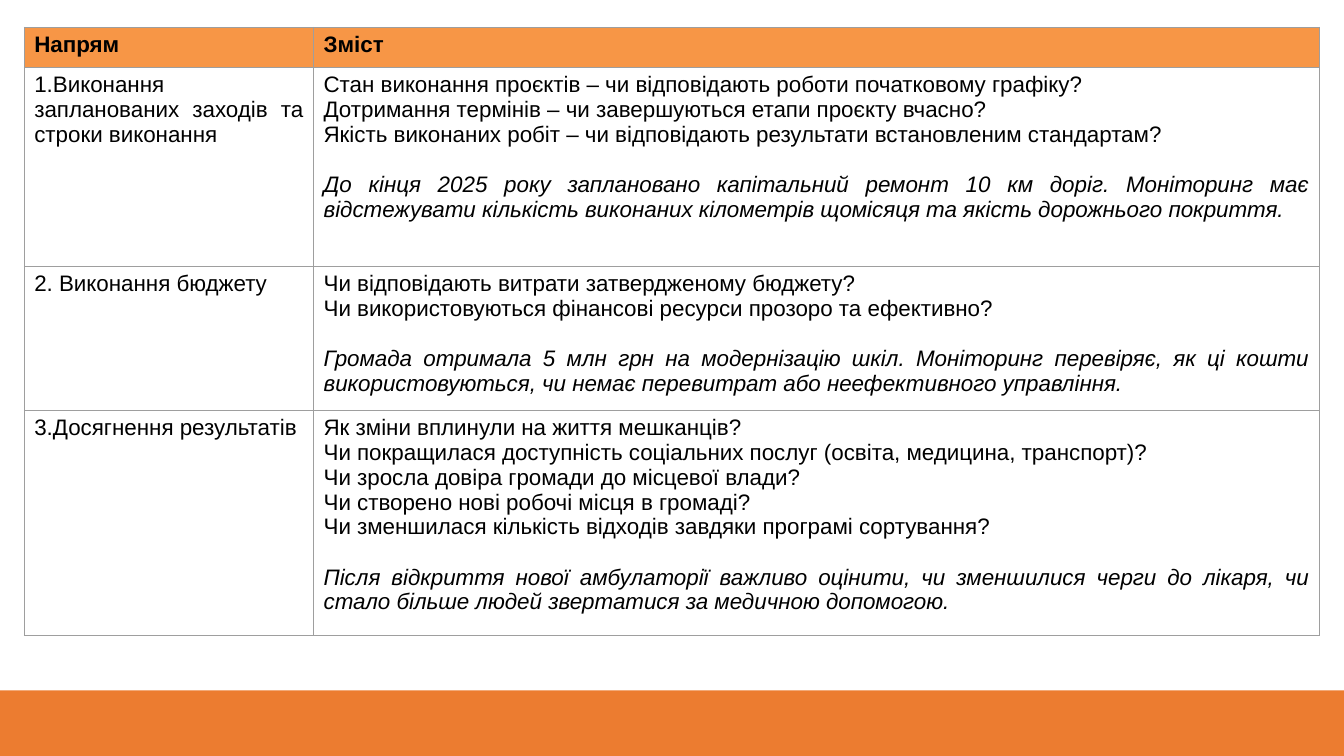
from lxml import etree
from pptx import Presentation
from pptx import util as u
from pptx.dml.color import RGBColor
from pptx.enum import shapes, text
from pptx.oxml.ns import qn

THEME = dict(font="Arial", size=u.Pt(16), gap=u.Pt(18), ink="000000",
             header="F79646", band="EC7C30", grid="9E9E9E", grid_width=u.Pt(0.75))
COLS = [2.87, 9.98]
ROWS = [0.4, 1.97, 1.43, 2.23]

# Each direction: name, monitoring questions, example
DIRECTIONS = [
    ("1.Виконання запланованих заходів та строки виконання",
     ["Стан виконання проєктів – чи відповідають роботи початковому графіку?",
      "Дотримання термінів – чи завершуються етапи проєкту вчасно?",
      "Якість виконаних робіт – чи відповідають результати встановленим стандартам?"],
     "До кінця 2025 року заплановано капітальний ремонт 10 км доріг. Моніторинг має "
     "відстежувати кількість виконаних кілометрів щомісяця та якість дорожнього покриття."),
    ("2. Виконання бюджету",
     ["Чи відповідають витрати затвердженому бюджету?",
      "Чи використовуються фінансові ресурси прозоро та ефективно?"],
     "Громада отримала 5 млн грн на модернізацію шкіл. Моніторинг перевіряє, як ці кошти "
     "використовуються, чи немає перевитрат або неефективного управління."),
    ("3.Досягнення результатів",
     ["Як зміни вплинули на життя мешканців?",
      "Чи покращилася доступність соціальних послуг (освіта, медицина, транспорт)?",
      "Чи зросла довіра громади до місцевої влади?",
      "Чи створено нові робочі місця в громаді?",
      "Чи зменшилася кількість відходів завдяки програмі сортування?"],
     "Після відкриття нової амбулаторії важливо оцінити, чи зменшилися черги до лікаря, чи "
     "стало більше людей звертатися за медичною допомогою."),
]


def fill_cell(cell, lines, bold=False, example=None):
    """Write the lines, then the example in italics below a gap."""
    tf = cell.text_frame
    for i, line in enumerate(lines + ([example] if example else [])):
        p = tf.paragraphs[0] if i == 0 else tf.add_paragraph()
        p.alignment = text.PP_ALIGN.JUSTIFY
        r = p.add_run()
        r.text = line
        r.font.name, r.font.size, r.font.bold = THEME["font"], THEME["size"], bold
        r.font.color.rgb = RGBColor.from_string(THEME["ink"])
        if line == example:
            r.font.italic = True
            p.space_before = THEME["gap"]


def style_cell(cell, color=None):
    """Set the grid lines, then the fill, in schema order."""
    tcPr = cell._tc.get_or_add_tcPr()
    for side in ("a:lnL", "a:lnR", "a:lnT", "a:lnB"):
        ln = etree.SubElement(tcPr, qn(side), w=str(THEME["grid_width"]))
        solid = etree.SubElement(ln, qn("a:solidFill"))
        etree.SubElement(solid, qn("a:srgbClr"), val=THEME["grid"])
    if color:
        cell.fill.solid()
        cell.fill.fore_color.rgb = RGBColor.from_string(color)
    else:
        cell.fill.background()


prs = Presentation()
prs.slide_width, prs.slide_height = u.Inches(13.33), u.Inches(7.5)
s = prs.slides.add_slide(prs.slide_layouts[6])

# Bottom band
band_top = u.Inches(6.85)
sp = s.shapes.add_shape(shapes.MSO_SHAPE.RECTANGLE, 0, band_top,
                        prs.slide_width, prs.slide_height - band_top)
sp.shadow.inherit = False
sp.fill.solid()
sp.fill.fore_color.rgb = RGBColor.from_string(THEME["band"])
sp.line.fill.background()

# Table grid
table = s.shapes.add_table(len(ROWS), len(COLS), u.Inches(0.24), u.Inches(0.27),
                           u.Inches(sum(COLS)), u.Inches(sum(ROWS))).table
table.first_row = table.horz_banding = False
for col, width in zip(table.columns, COLS):
    col.width = u.Inches(width)
for row, height in zip(table.rows, ROWS):
    row.height = u.Inches(height)

# Header row
for cell, heading in zip(table.rows[0].cells, ["Напрям", "Зміст"]):
    fill_cell(cell, [heading], bold=True)
    style_cell(cell, THEME["header"])

# Monitoring directions
for i, (name, questions, example) in enumerate(DIRECTIONS, start=1):
    fill_cell(table.cell(i, 0), [name])
    fill_cell(table.cell(i, 1), questions, example=example)
    for cell in table.rows[i].cells:
        style_cell(cell)

prs.save("out.pptx")
